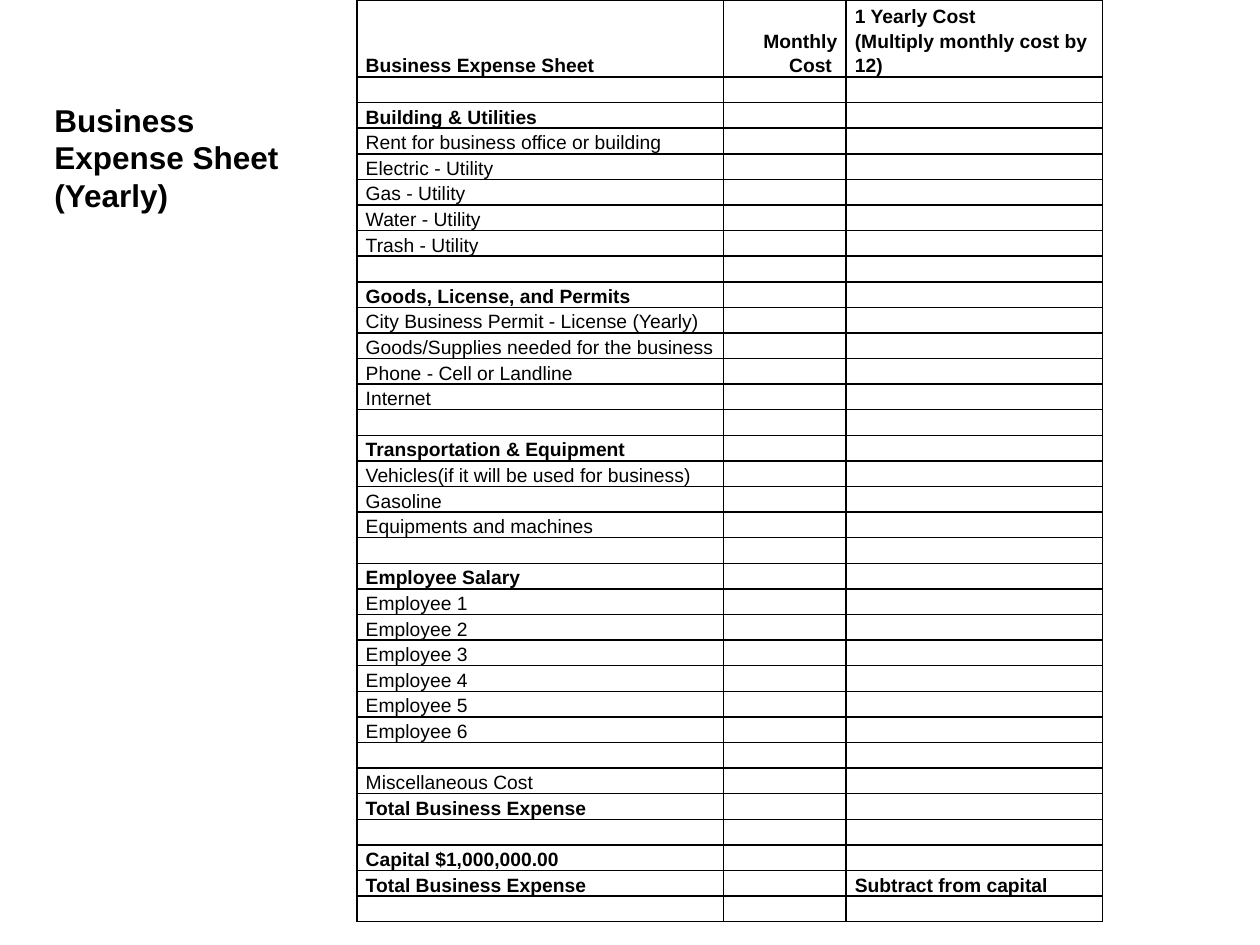
from lxml.etree import SubElement
from pptx import Presentation
from pptx.dml.color import RGBColor
from pptx.enum.text import MSO_ANCHOR, PP_ALIGN
from pptx.oxml.ns import qn
from pptx.util import Pt

TITLE = "Business Expense Sheet\n(Yearly)"
HEADER = ["Business Expense Sheet", " Monthly Cost ",
          "1 Yearly Cost\n(Multiply monthly cost by 12)"]
# Each group: bold heading, then its plain items
GROUPS = [
    ("Building & Utilities",
     ["Rent for business office or building", "Electric - Utility",
      "Gas - Utility", "Water - Utility", "Trash - Utility"]),
    ("Goods, License, and Permits",
     ["City Business Permit - License (Yearly)",
      "Goods/Supplies needed for the business",
      "Phone - Cell or Landline", "Internet"]),
    ("Transportation & Equipment",
     ["Vehicles(if it will be used for business)", "Gasoline",
      "Equipments and machines"]),
    ("Employee Salary", [f"Employee {n}" for n in range(1, 7)]),
]
# Closing rows: cells, bold
TOTALS = [
    (["Miscellaneous Cost", "", ""], False),
    (["Total Business Expense", "", ""], True),
    (["", "", ""], False),
    (["Capital $1,000,000.00", "", ""], True),
    (["Total Business Expense", "", "Subtract from capital"], True),
    (["", "", ""], False),
]
BLANK = (["", "", ""], False)
FONT, BLACK = "Arial", "000000"
TABLE_LEFT, TABLE_TOP = 204, 0
COL_WIDTHS = [209.5, 70, 146.5]
HEADER_HEIGHT, ROW_HEIGHT = 44, 14.65
CELL_SIZE, TITLE_SIZE = 11, 18


def color(hex_code):
    return RGBColor.from_string(hex_code)


def format_text(tf, size, bold):
    for p in tf.paragraphs:
        for r in p.runs:
            r.font.name, r.font.size, r.font.bold = FONT, Pt(size), bold
            r.font.color.rgb = color(BLACK)


def add_borders(cell):
    tc_pr = cell._tc.get_or_add_tcPr()
    for i, side in enumerate(("a:lnL", "a:lnR", "a:lnT", "a:lnB")):
        ln = tc_pr.makeelement(qn(side), {"w": str(Pt(1))})
        fill = SubElement(ln, qn("a:solidFill"))
        SubElement(fill, qn("a:srgbClr"), val=BLACK)
        tc_pr.insert(i, ln)


def fill_cell(cell, text, bold):
    cell.fill.background()
    add_borders(cell)
    cell.vertical_anchor = MSO_ANCHOR.BOTTOM
    cell.margin_left = cell.margin_right = Pt(5)
    cell.margin_top = cell.margin_bottom = 0
    tf = cell.text_frame
    tf.text = text
    format_text(tf, CELL_SIZE, bold)
    for p in tf.paragraphs:
        p.line_spacing = 1.15
        if not text:  # keeps an empty row as low as the others
            SubElement(p._p, qn("a:endParaRPr"), sz=str(CELL_SIZE * 100))


rows = [(HEADER, True)]
for heading, items in GROUPS:
    rows += [BLANK, ([heading, "", ""], True)]
    rows += [([item, "", ""], False) for item in items]
rows += [BLANK] + TOTALS

prs = Presentation()
prs.slide_width, prs.slide_height = Pt(720), Pt(540)
s = prs.slides.add_slide(prs.slide_layouts[6])

table_height = HEADER_HEIGHT + ROW_HEIGHT * (len(rows) - 1)
table = s.shapes.add_table(len(rows), len(COL_WIDTHS), Pt(TABLE_LEFT), Pt(TABLE_TOP),
                           Pt(sum(COL_WIDTHS)), Pt(table_height)).table
table.first_row = table.horz_banding = False
for col, width in zip(table.columns, COL_WIDTHS):
    col.width = Pt(width)
for i, (texts, bold) in enumerate(rows):
    table.rows[i].height = Pt(ROW_HEIGHT if i else HEADER_HEIGHT)
    for j, text in enumerate(texts):
        fill_cell(table.cell(i, j), text, bold)
table.cell(0, 1).text_frame.paragraphs[0].alignment = PP_ALIGN.RIGHT

title = s.shapes.add_textbox(Pt(24), Pt(54), Pt(162), Pt(94))
tf = title.text_frame
tf.word_wrap = True
tf.text = TITLE
format_text(tf, TITLE_SIZE, True)

prs.save("out.pptx")
